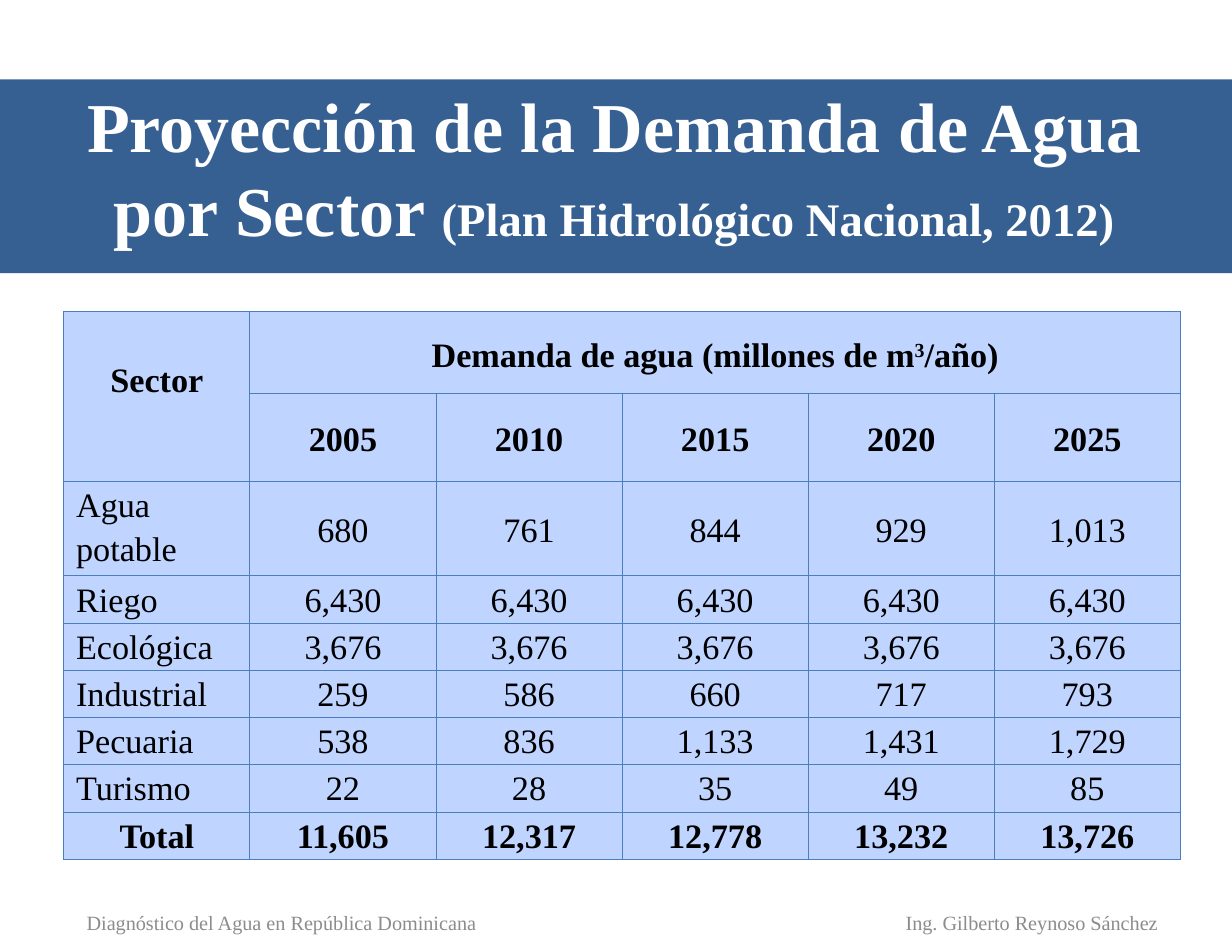
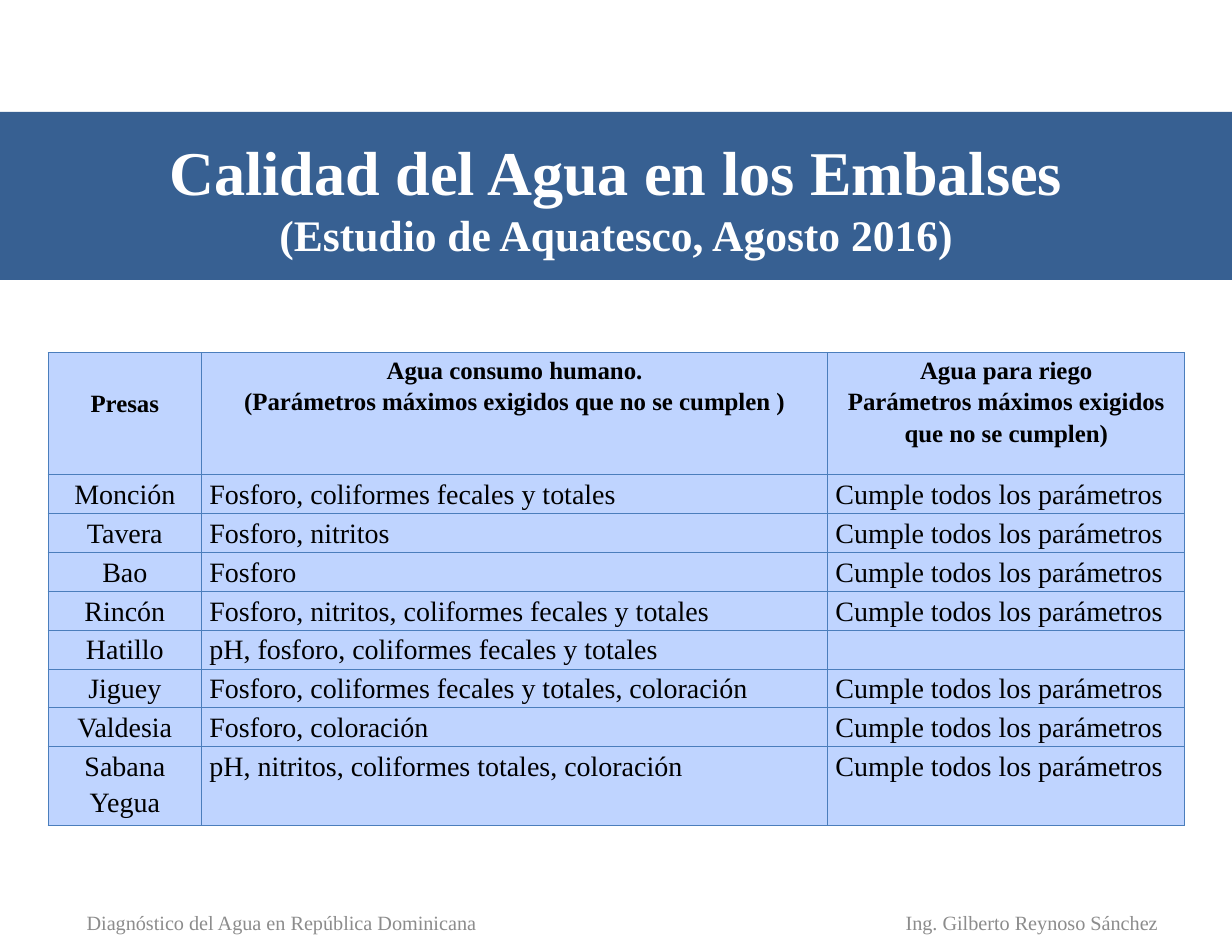
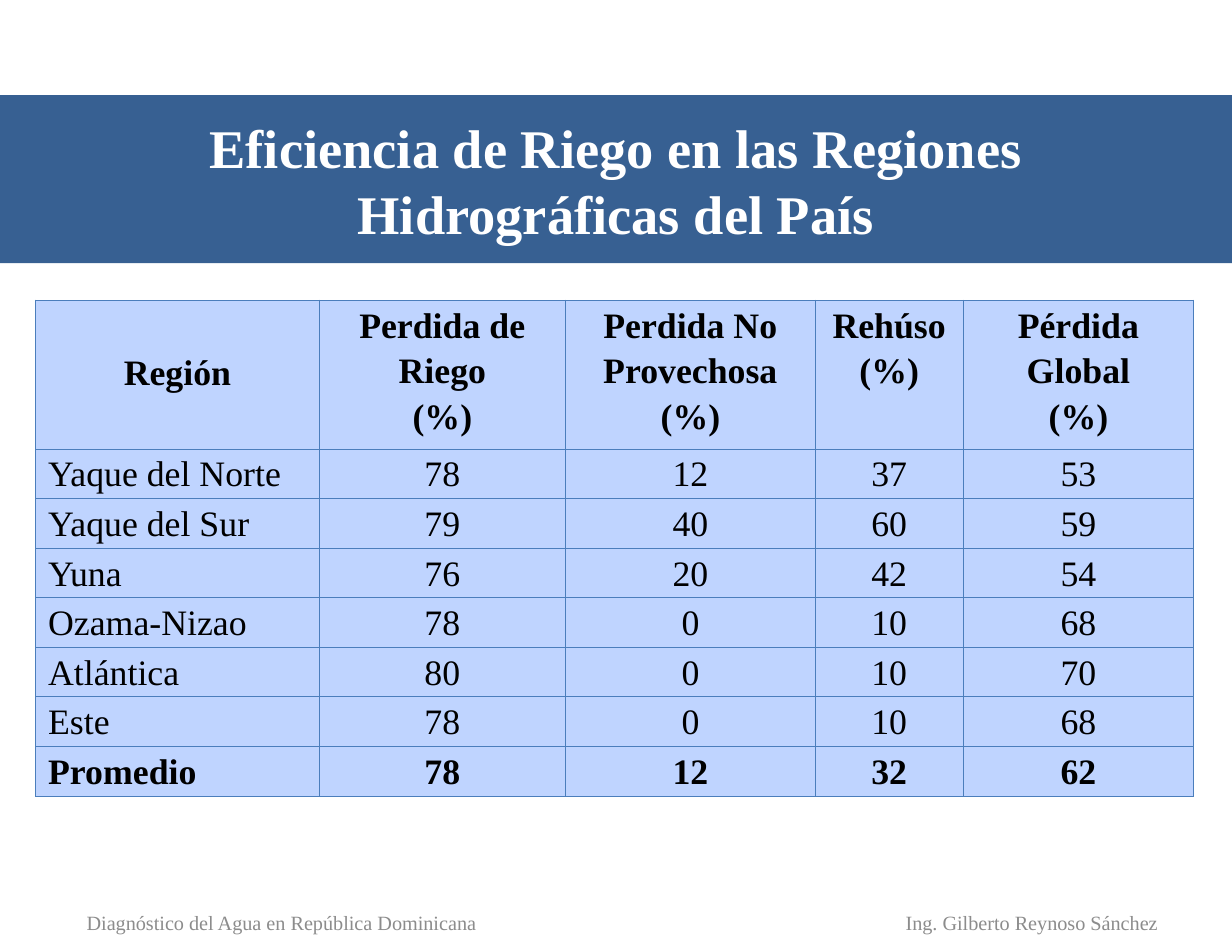
from collections import namedtuple
from dataclasses import dataclass

from lxml import etree
from pptx import Presentation
from pptx import util as u
from pptx.dml.color import RGBColor
from pptx.enum import shapes, text
from pptx.oxml import ns

Box = namedtuple("Box", "left top width height")
LEFT, CENTER, JUSTIFY = text.PP_ALIGN.LEFT, text.PP_ALIGN.CENTER, text.PP_ALIGN.JUSTIFY


@dataclass(frozen=True)
class Theme:
    """Colours, type and spacing shared by all slides."""
    font: str = "Times New Roman"
    band: str = "376092"
    title: str = "FFFFFF"
    footer: str = "8C8C8C"
    body: str = "000000"
    cell: str = "BFD4FF"
    border: str = "4B7EBC"
    border_width: float = 0.75
    footer_size: int = 13
    line_spacing: float = 1.15
    line_height: float = 1.15


THEME = Theme()
SLIDE_BOX = Box(0, 0, 11, 8.5)
TITLE_INSET = Box(0.55, -0.08, 9.9, 1.67)
FOOTERS = [
    ("Ing. Gilberto Reynoso Sánchez", Box(7.47, 8.01, 3.48, 0.45)),
    ("Diagnóstico del Agua en República Dominicana", Box(0.47, 8.01, 4.08, 0.45)),
]


def inches(box):
    """Turn a box into lengths."""
    return [u.Inches(value) for value in box]


def style_run(run, size, color, bold=False):
    """Give a run its type."""
    run.font.name = THEME.font
    run.font.size = u.Pt(size)
    run.font.bold = bold
    run.font.color.rgb = RGBColor.from_string(color)


def prepare_frame(frame):
    """Set wrapping, middle anchoring and margins of a text frame."""
    frame.word_wrap = True
    frame.auto_size = text.MSO_AUTO_SIZE.NONE
    frame.vertical_anchor = text.MSO_ANCHOR.MIDDLE
    frame.margin_left = frame.margin_right = u.Inches(0.11)
    frame.margin_top = frame.margin_bottom = u.Inches(0.06)


def add_title_band(slide, band_box, title_inset, lines):
    """Place the band and the title on it; each line is a list of (text, size)."""
    band = slide.shapes.add_shape(shapes.MSO_SHAPE.RECTANGLE, *inches(band_box))
    band.shadow.inherit = False
    band.fill.solid()
    band.fill.fore_color.rgb = RGBColor.from_string(THEME.band)
    band.line.fill.background()
    title = slide.shapes.title
    title.element.addprevious(band.element)
    title.left, title.top, title.width, title.height = inches(Box(
        band_box.left + title_inset.left, band_box.top + title_inset.top,
        title_inset.width, title_inset.height))
    frame = title.text_frame
    prepare_frame(frame)
    for index, pieces in enumerate(lines):
        paragraph = frame.add_paragraph() if index else frame.paragraphs[0]
        paragraph.alignment = CENTER
        for words, size in pieces:
            run = paragraph.add_run()
            run.text = words
            style_run(run, size, THEME.title, bold=True)


def add_footers(slide, box):
    """Place the author and the subject at the foot of the slide."""
    for words, place in FOOTERS:
        label = slide.shapes.add_textbox(*inches(Box(
            box.left + place.left, box.top + place.top, place.width, place.height)))
        prepare_frame(label.text_frame)
        label.text_frame.text = words
        paragraph = label.text_frame.paragraphs[0]
        paragraph.alignment = CENTER
        style_run(paragraph.runs[0], THEME.footer_size, THEME.footer)


def add_borders(cell):
    """Draw the four borders of a cell."""
    properties = cell._tc.get_or_add_tcPr()
    for side in ("lnL", "lnR", "lnT", "lnB"):
        line = etree.SubElement(properties, ns.qn(f"a:{side}"), w=str(u.Pt(THEME.border_width)))
        fill = etree.SubElement(line, ns.qn("a:solidFill"))
        etree.SubElement(fill, ns.qn("a:srgbClr"), val=THEME.border)


def style_cell(cell, size, alignment, bold, margin):
    """Format the paragraphs of a cell."""
    cell.margin_left = cell.margin_right = u.Inches(margin)
    cell.margin_top = cell.margin_bottom = 0
    for paragraph in cell.text_frame.paragraphs:
        paragraph.alignment = alignment
        paragraph.line_spacing = THEME.line_spacing
        for run in paragraph.runs:
            style_run(run, size, THEME.body, bold)


def lower_text(cell, size):
    """Move the text of a cell down by one line of the given size."""
    cell.margin_top = u.Inches(size * THEME.line_height * THEME.line_spacing / 72)


def add_data_table(slide, box, rows, widths, heights, alignments, size,
                   header_rows=1, header_size=None, total=False, margin=0.11):
    """Fill a table; heights left as None share the rest of the box."""
    table = slide.shapes.add_table(len(rows), len(widths), *inches(box)).table
    table.first_row = table.horz_banding = False
    for column, width in zip(table.columns, widths):
        column.width = u.Inches(width)
    known = [height for height in heights if height]
    shared = (box.height - sum(known)) / max(1, len(heights) - len(known))
    for row, height in zip(table.rows, heights):
        row.height = u.Inches(height or shared)
    for row_index, values in enumerate(rows):
        header = row_index < header_rows
        bold = header or (total and row_index == len(rows) - 1)
        for column_index, value in enumerate(values):
            cell = table.cell(row_index, column_index)
            cell.text_frame.text = value
            style_cell(cell, header_size if header and header_size else size,
                       CENTER if header else alignments[column_index], bold, margin)
            add_borders(cell)
            cell.fill.solid()
            cell.fill.fore_color.rgb = RGBColor.from_string(THEME.cell)
    return table


def start_slide(presentation, band_box, lines, title_inset=TITLE_INSET):
    """Add a slide with its title band and footers."""
    slide = presentation.slides.add_slide(presentation.slide_layouts[5])
    add_title_band(slide, band_box, title_inset, lines)
    add_footers(slide, SLIDE_BOX)
    return slide


def add_demand_slide(presentation, box):
    """Show the water demand of each sector by year."""
    slide = start_slide(
        presentation, Box(0, 0.71, 11, 1.73),
        [[("Proyección de la Demanda de Agua por Sector ", 45),
          ("(Plan Hidrológico Nacional, 2012)", 30)]],
        Box(0.37, 0.07, 10.23, 1.42))
    size = 22
    rows = [
        ["Sector", "Demanda de agua (millones de m", "", "", "", ""],
        ["", "2005", "2010", "2015", "2020", "2025"],
        ["Agua potable", "680", "761", "844", "929", "1,013"],
        ["Riego"] + ["6,430"] * 5,
        ["Ecológica"] + ["3,676"] * 5,
        ["Industrial", "259", "586", "660", "717", "793"],
        ["Pecuaria", "538", "836", "1,133", "1,431", "1,729"],
        ["Turismo", "22", "28", "35", "49", "85"],
        ["Total", "11,605", "12,317", "12,778", "13,232", "13,726"],
    ]
    table = add_data_table(
        slide, box, rows, [box.width / 6] * 6, [0.73, 0.73, 0.84] + [None] * 6,
        [LEFT] + [CENTER] * 5, size, header_rows=2, total=True)
    sector, demand = table.cell(0, 0), table.cell(0, 1)
    sector.merge(table.cell(1, 0))
    demand.merge(table.cell(0, 5))
    paragraph = demand.text_frame.paragraphs[0]
    for words in ("3", "/año)"):
        run = paragraph.add_run()
        run.text = words
        style_run(run, size, THEME.body, bold=True)
    paragraph.runs[1]._r.get_or_add_rPr().set("baseline", "30000")
    lower_text(sector, size)
    lower_text(demand, 10)
    for column in range(1, 6):
        lower_text(table.cell(1, column), 11)
        lower_text(table.cell(2, column), 12)
    table.cell(len(rows) - 1, 0).text_frame.paragraphs[0].alignment = CENTER


def add_quality_slide(presentation, box):
    """Show the limits that the water of each reservoir exceeds."""
    slide = start_slide(
        presentation, Box(0, 1, 11, 1.5),
        [[("Calidad del Agua en los Embalses", 40)],
         [("(Estudio de Aquatesco, Agosto 2016)", 28)]])
    reservoirs = {
        "Monción": "Fosforo, coliformes fecales y totales",
        "Tavera": "Fosforo, nitritos",
        "Bao": "Fosforo",
        "Rincón": "Fosforo, nitritos, coliformes fecales y totales",
        "Hatillo": "pH, fosforo, coliformes fecales y totales",
        "Jiguey": "Fosforo, coliformes fecales y totales, coloración",
        "Valdesia": "Fosforo, coloración",
        "Sabana Yegua": "pH, nitritos, coliformes totales, coloración",
    }
    rows = [["Presas",
             "Agua consumo humano.\n(Parámetros máximos exigidos que no se cumplen )",
             "Agua para riego\nParámetros máximos exigidos que no se cumplen)"]]
    for name, exceeded in reservoirs.items():
        irrigation = "" if name == "Hatillo" else "Cumple todos los parámetros"
        rows.append([name, exceeded, irrigation])
    table = add_data_table(
        slide, box, rows, [1.37, 5.59, 3.19], [1.09] + [None] * 7 + [0.7],
        [CENTER, JUSTIFY, JUSTIFY], 18, header_size=16, margin=0.07)
    lower_text(table.cell(0, 0), 16)


def add_efficiency_slide(presentation, box):
    """Show the irrigation losses of each region."""
    slide = start_slide(
        presentation, Box(0, 0.85, 11, 1.5),
        [[("Eficiencia de Riego en las Regiones Hidrográficas del País", 35)]])
    rows = [
        ["Región", "Perdida de Riego\n(%)", "Perdida No Provechosa\n(%)",
         "Rehúso\n(%)", "Pérdida Global\n(%)"],
        ["Yaque del Norte", "78", "12", "37", "53"],
        ["Yaque del Sur", "79", "40", "60", "59"],
        ["Yuna", "76", "20", "42", "54"],
        ["Ozama-Nizao", "78", "0", "10", "68"],
        ["Atlántica", "80", "0", "10", "70"],
        ["Este", "78", "0", "10", "68"],
        ["Promedio", "78", "12", "32", "62"],
    ]
    table = add_data_table(
        slide, box, rows, [2.53, 2.2, 2.23, 1.32, 2.06], [1.33] + [None] * 7,
        [LEFT] + [CENTER] * 4, 23, total=True)
    lower_text(table.cell(0, 0), 23)


def main():
    """Build the presentation."""
    presentation = Presentation()
    presentation.slide_width = u.Inches(SLIDE_BOX.width)
    presentation.slide_height = u.Inches(SLIDE_BOX.height)
    add_demand_slide(presentation, Box(0.57, 2.78, 9.97, 4.83))
    add_quality_slide(presentation, Box(0.43, 3.15, 10.15, 4.22))
    add_efficiency_slide(presentation, Box(0.32, 2.68, 10.34, 4.43))
    presentation.save("out.pptx")


if __name__ == "__main__":
    main()
